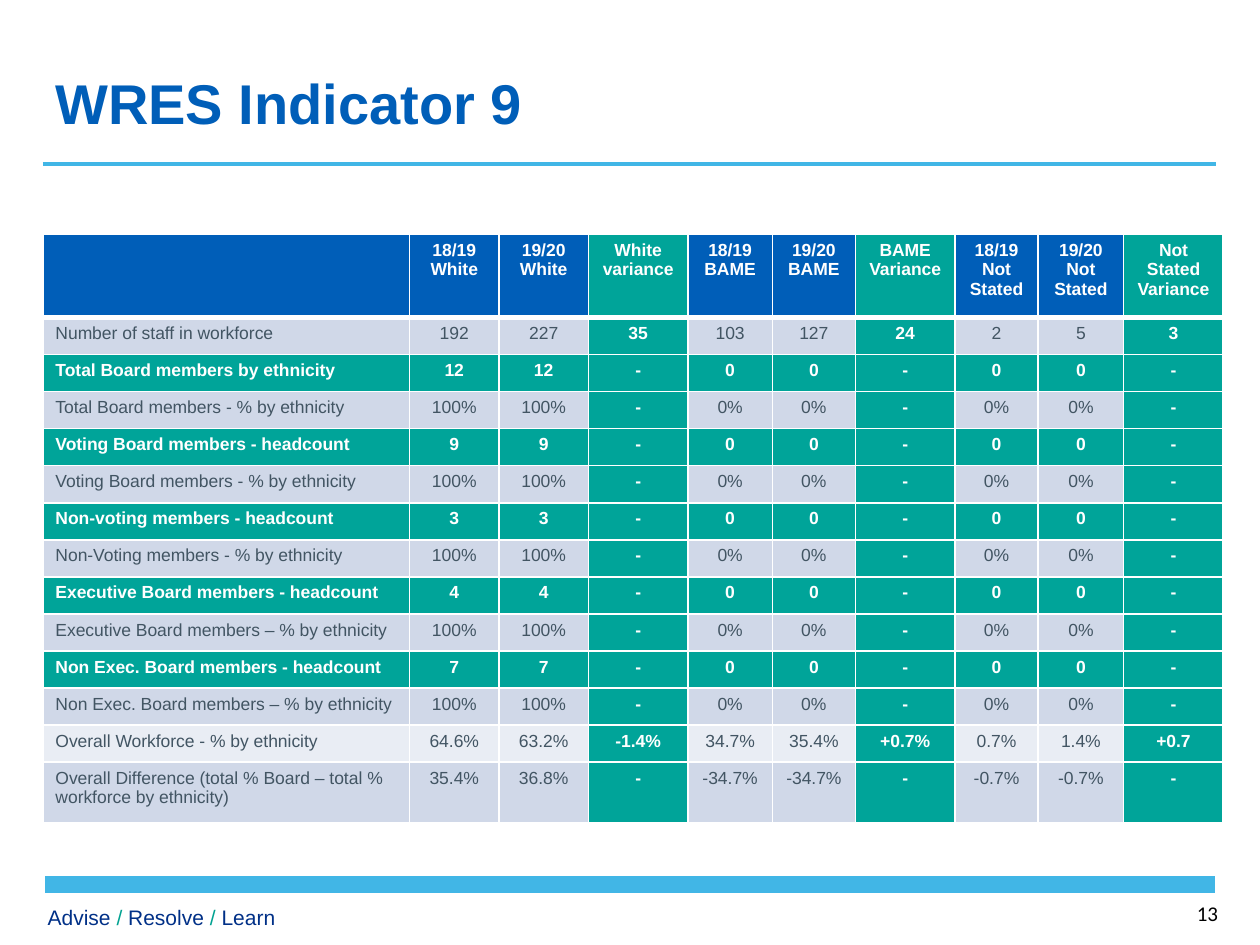
from lxml import etree
from pptx import Presentation
from pptx.dml.color import RGBColor
from pptx.enum.shapes import MSO_CONNECTOR
from pptx.enum.text import MSO_ANCHOR, PP_ALIGN
from pptx.oxml.ns import qn
from pptx.util import Inches, Pt

STRAIGHT = MSO_CONNECTOR.STRAIGHT
MIDDLE, TOP = MSO_ANCHOR.MIDDLE, MSO_ANCHOR.TOP
LEFT, CENTER = PP_ALIGN.LEFT, PP_ALIGN.CENTER

BLUE = RGBColor(0x00, 0x5E, 0xB8)
NAVY = RGBColor(0x00, 0x30, 0x87)
SKY = RGBColor(0x41, 0xB6, 0xE6)
TEAL = RGBColor(0x00, 0xA4, 0x99)
SLASH_TEAL = RGBColor(0x00, 0xA2, 0x91)
BAND = RGBColor(0xD0, 0xD8, 0xE8)
PALE = RGBColor(0xE9, 0xED, 0xF4)
SLATE = RGBColor(0x42, 0x55, 0x63)
WHITE = RGBColor(0xFF, 0xFF, 0xFF)
BLACK = RGBColor(0x00, 0x00, 0x00)

G = Inches(0.01)  # the slide is a grid of 1000 columns by 750 rows

prs = Presentation()
prs.slide_width, prs.slide_height = 1000 * G, 750 * G
s = prs.slides.add_slide(prs.slide_layouts[6])


def add_text(x, y, w, h, runs, size, font="Arial", bold=False, anchor=TOP):
    """Add a one-paragraph text box; runs are (text, colour) pairs."""
    tf = s.shapes.add_textbox(x * G, y * G, w * G, h * G).text_frame
    tf.word_wrap, tf.vertical_anchor = True, anchor
    for text, color in runs:
        r = tf.paragraphs[0].add_run()
        r.text = text
        for name, value in {"size": Pt(size), "name": font, "bold": bold}.items():
            setattr(r.font, name, value)
        r.font.color.rgb = color


def add_borders(cell, widths):
    """Draw white cell borders; widths maps an XML side tag to points."""
    tcPr = cell._tc.get_or_add_tcPr()
    for side, width in widths.items():
        ln = etree.SubElement(tcPr, qn(f"a:{side}"), w=str(Pt(width)))
        fill = etree.SubElement(ln, qn("a:solidFill"))
        etree.SubElement(fill, qn("a:srgbClr"), val=str(WHITE))


# Title, rules and footer
for x1, x2, y, width in [(34, 965, 130, 2), (964, 36, 702, 10)]:
    line = s.shapes.add_connector(STRAIGHT, x1 * G, y * G, x2 * G, y * G)
    line.line.color.rgb, line.line.width = SKY, Pt(width)
    etree.SubElement(line._element.spPr, qn("a:effectLst"))

add_text(34, 44, 757, 74, [("WRES Indicator 9", BLUE)], 32, bold=True, anchor=MIDDLE)
add_text(28, 713, 248, 30,
         [("Advise ", NAVY), ("/", SLASH_TEAL), (" Resolve ", NAVY),
          ("/", SLASH_TEAL), (" Learn", NAVY)], 12)
add_text(940, 710, 55, 40, [("13", BLACK)], 12, font="Calibri")

# Table content: each board group has a headcount row and a percentage row
header = ["", "18/19\nWhite", "19/20\nWhite", "White variance",
          "18/19\nBAME", "19/20\nBAME", "BAME Variance",
          "18/19\nNot Stated", "19/20\nNot Stated", "Not Stated Variance"]
board_groups = [
    ("Total Board members by ethnicity", 12, "Total Board members - % by ethnicity"),
    ("Voting Board members - headcount", 9, "Voting Board members - % by ethnicity"),
    ("Non-voting members - headcount", 3, "Non-Voting members - % by ethnicity"),
    ("Executive Board members - headcount", 4, "Executive Board members – % by ethnicity"),
    ("Non Exec. Board members - headcount", 7, "Non Exec. Board members – % by ethnicity"),
]
rows = [(BLUE, header),
        (BAND, ["Number of staff in workforce", 192, 227, 35, 103, 127, 24, 2, 5, 3])]
for count_label, count, share_label in board_groups:
    rows.append((TEAL, [count_label, count, count, "-"] + [0, 0, "-"] * 2))
    rows.append((BAND, [share_label, "100%", "100%", "-"] + ["0%", "0%", "-"] * 2))
rows += [
    (PALE, ["Overall Workforce - % by ethnicity", "64.6%", "63.2%", "-1.4%",
            "34.7%", "35.4%", "+0.7%", "0.7%", "1.4%", "+0.7"]),
    (BAND, ["Overall Difference (total % Board – total % workforce by ethnicity)",
            "35.4%", "36.8%", "-", "-34.7%", "-34.7%", "-", "-0.7%", "-0.7%", "-"]),
]

col_widths = [291, 71, 71, 79, 67, 66, 79, 66, 68, 79]
table_h, header_h, last_h = 467 * G, 66 * G, 48 * G
body_h = (table_h - header_h - last_h) // (len(rows) - 2)
row_heights = [header_h] + [body_h] * (len(rows) - 2) + [last_h]

table = s.shapes.add_table(len(rows), len(header), 34 * G, 186 * G,
                           sum(col_widths) * G, table_h).table
table.first_row = table.horz_banding = False
for column, width in zip(table.columns, col_widths):
    column.width = width * G
for row, height in zip(table.rows, row_heights):
    row.height = height

for i, (row_fill, values) in enumerate(rows):
    for j, value in enumerate(values):
        cell = table.cell(i, j)
        add_borders(cell, {"lnL": 1, "lnR": 1, "lnT": 3 if i == 1 else 1,
                           "lnB": 3 if i == 0 else 1})
        is_variance = j > 0 and j % 3 == 0
        fill = TEAL if is_variance else row_fill
        strong = fill in (BLUE, TEAL)
        cell.fill.solid()
        cell.fill.fore_color.rgb = fill
        cell.text = str(value)
        for p in cell.text_frame.paragraphs:
            p.alignment = CENTER if j else LEFT
            for name, setting in {"size": Pt(10), "name": "Arial", "bold": strong}.items():
                setattr(p.font, name, setting)
            p.font.color.rgb = WHITE if strong else SLATE

prs.save("out.pptx")
